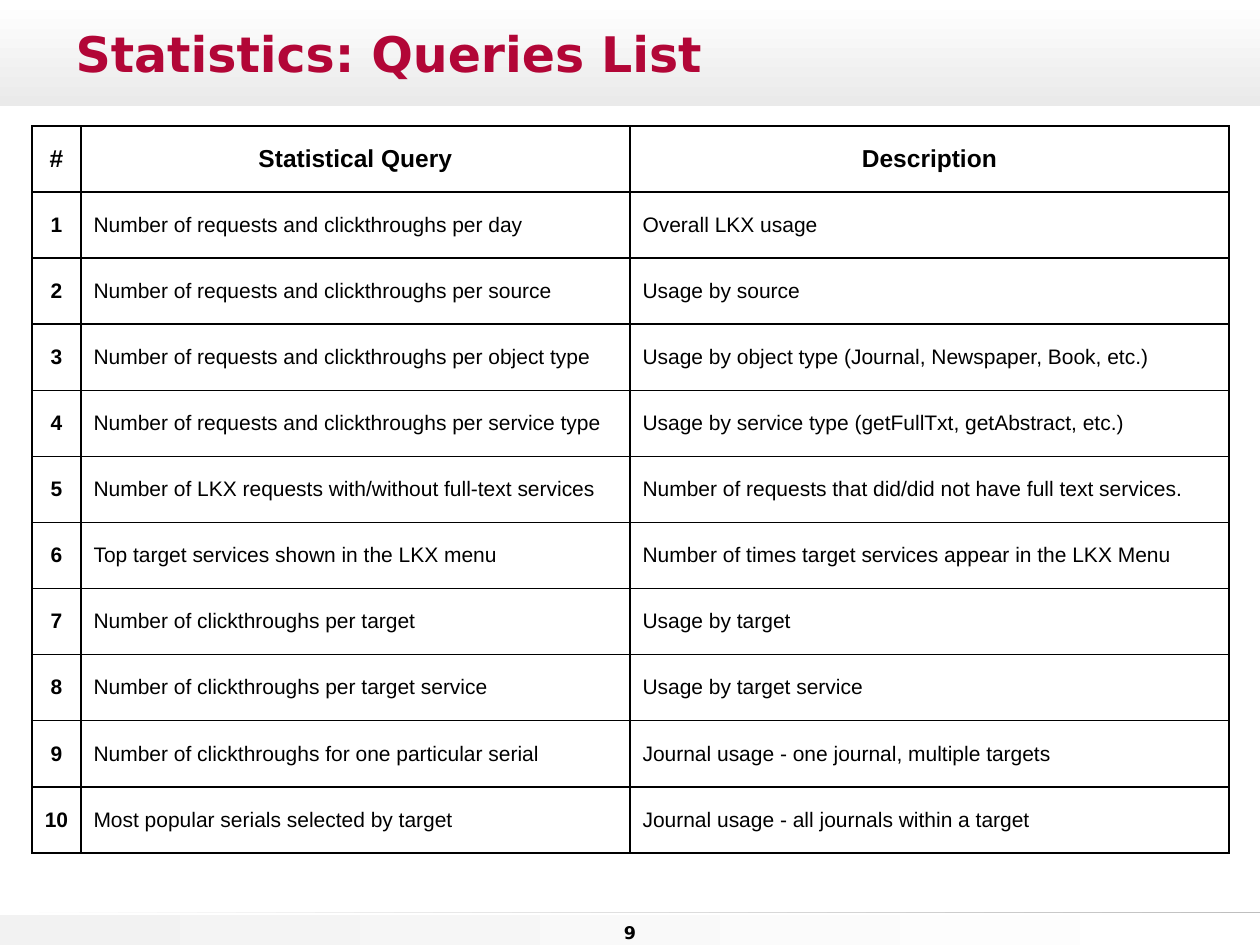
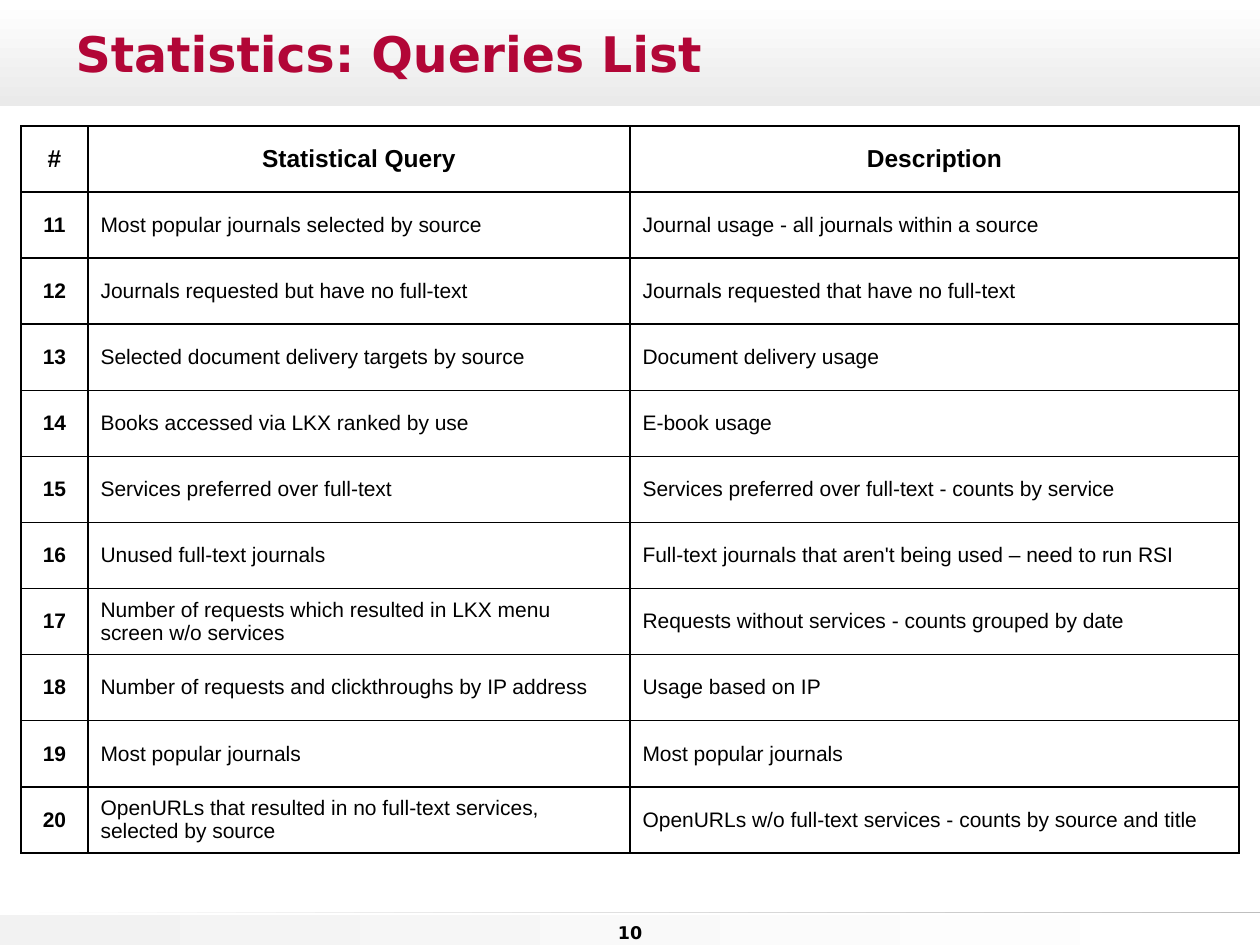
import pptx
import pptx.util
import pptx.dml.color
import pptx.enum.shapes
import pptx.enum.text
import pptx.oxml

# Content
TITLE = "Statistics: Queries List"
HEADINGS = ("#", "Statistical Query", "Description")
FIRST_PAGE = 9

SLIDES = [
    {
        "left": 32,
        "columns": (49, 549, 599),
        "first_number": 1,
        "queries": [
            ("Number of requests and clickthroughs per day", "Overall LKX usage"),
            ("Number of requests and clickthroughs per source", "Usage by source"),
            ("Number of requests and clickthroughs per object type",
             "Usage by object type (Journal, Newspaper, Book, etc.)"),
            ("Number of requests and clickthroughs per service type",
             "Usage by service type (getFullTxt, getAbstract, etc.)"),
            ("Number of LKX requests with/without full-text services",
             "Number of requests that did/did not have full text services."),
            ("Top target services shown in the LKX menu",
             "Number of times target services appear in the LKX Menu"),
            ("Number of clickthroughs per target", "Usage by target"),
            ("Number of clickthroughs per target service", "Usage by target service"),
            ("Number of clickthroughs for one particular serial",
             "Journal usage - one journal, multiple targets"),
            ("Most popular serials selected by target",
             "Journal usage - all journals within a target"),
        ],
    },
    {
        "left": 21,
        "columns": (67, 542, 609),
        "first_number": 11,
        "queries": [
            ("Most popular journals selected by source",
             "Journal usage - all journals within a source"),
            ("Journals requested but have no full-text",
             "Journals requested that have no full-text"),
            ("Selected document delivery targets by source", "Document delivery usage"),
            ("Books accessed via LKX ranked by use", "E-book usage"),
            ("Services preferred over full-text",
             "Services preferred over full-text - counts by service"),
            ("Unused full-text journals",
             "Full-text journals that aren't being used – need to run RSI"),
            ("Number of requests which resulted in LKX menu screen w/o services",
             "Requests without services - counts grouped by date"),
            ("Number of requests and clickthroughs by IP address", "Usage based on IP"),
            ("Most popular journals", "Most popular journals"),
            ("OpenURLs that resulted in no full-text services, selected by source",
             "OpenURLs w/o full-text services - counts by source and title"),
        ],
    },
]

# Shared look: lengths in px, 126 to the inch
WIDTH, HEIGHT = 1260, 945
TITLE_BOX = (63, 16, 1134, 73)
PAGE_BOX = (590, 886, 80, 63)
TABLE_TOP, TABLE_HEIGHT = 126, 727
DISPLAY_FONT, TABLE_FONT = "DejaVu Sans", "Arial"
CRIMSON, BLACK, WHITE = "B20637", "000000", "FFFFFF"

# Box, start colour, end colour, gradient angle (270 runs downwards)
BANDS = [
    ((0, 0, WIDTH, 106), WHITE, "EAEAEA", 270),
    ((0, 915, WIDTH, 30), "F2F2F2", WHITE, 0),
    ((0, 912, WIDTH, 1), WHITE, "BFBFBF", 0),
]

ALIGN = pptx.enum.text.PP_ALIGN
ANCHOR = pptx.enum.text.MSO_ANCHOR


def px(length):
    return pptx.util.Emu(round(length * 914400 / 126))


def color(hex_string):
    return pptx.dml.color.RGBColor.from_string(hex_string)


def place(shape, box):
    shape.left, shape.top, shape.width, shape.height = map(px, box)


def write(text_frame, text, font, size, hex_string, bold, align):
    text_frame.text = text
    paragraph = text_frame.paragraphs[0]
    paragraph.alignment = align
    for run in paragraph.runs:
        run.font.name = font
        run.font.size = pptx.util.Pt(size)
        run.font.bold = bold
        run.font.color.rgb = color(hex_string)


def add_bands(slide, layout):
    """Draw the bands and move them behind the slides, onto the layout."""
    for box, start, end, angle in BANDS:
        band = slide.shapes.add_shape(
            pptx.enum.shapes.MSO_SHAPE.RECTANGLE, *map(px, box))
        band.shadow.inherit = False
        band.line.fill.background()
        band.fill.gradient()
        band.fill.gradient_angle = angle
        for stop, hex_string in zip(band.fill.gradient_stops, (start, end)):
            stop.color.rgb = color(hex_string)
        layout.shapes.element.append(band.element)


def add_title(slide):
    title = slide.shapes.title
    place(title, TITLE_BOX)
    title.text_frame.auto_size = pptx.enum.text.MSO_AUTO_SIZE.NONE
    title.text_frame.vertical_anchor = ANCHOR.MIDDLE
    write(title.text_frame, TITLE, DISPLAY_FONT, 28, CRIMSON, True, ALIGN.LEFT)


def add_page_number(slide, number):
    frame = slide.shapes.add_textbox(*map(px, PAGE_BOX)).text_frame
    frame.word_wrap = True
    frame.vertical_anchor = ANCHOR.BOTTOM
    write(frame, str(number), DISPLAY_FONT, 10, BLACK, True, ALIGN.CENTER)


def add_borders(cell):
    properties = cell._tc.get_or_add_tcPr()
    for position, side in enumerate("LRTB"):
        properties.insert(position, pptx.oxml.parse_xml(
            f'<a:ln{side} xmlns:a="http://schemas.openxmlformats.org/drawingml/2006/main"'
            f' w="12700"><a:solidFill><a:srgbClr val="{BLACK}"/></a:solidFill></a:ln{side}>'))


def add_query_table(slide, left, columns, first_number, queries):
    rows = [HEADINGS]
    rows += [(str(number), *query) for number, query in enumerate(queries, first_number)]
    table = slide.shapes.add_table(
        len(rows), len(columns), px(left), px(TABLE_TOP),
        px(sum(columns)), px(TABLE_HEIGHT)).table
    table.first_row = table.horz_banding = False
    for column, width in zip(table.columns, columns):
        column.width = px(width)
    for row_index, texts in enumerate(rows):
        table.rows[row_index].height = px(TABLE_HEIGHT / len(rows))
        for column_index, text in enumerate(texts):
            cell = table.cell(row_index, column_index)
            is_heading = row_index == 0
            is_label = is_heading or column_index == 0
            cell.fill.background()
            cell.vertical_anchor = ANCHOR.MIDDLE
            write(cell.text_frame, text, TABLE_FONT, 14 if is_heading else 12, BLACK,
                  is_label, ALIGN.CENTER if is_label else ALIGN.LEFT)
            add_borders(cell)


def main():
    presentation = pptx.Presentation()
    presentation.slide_width, presentation.slide_height = px(WIDTH), px(HEIGHT)
    layout = presentation.slide_layouts[5]
    for index, content in enumerate(SLIDES):
        slide = presentation.slides.add_slide(layout)
        if index == 0:
            add_bands(slide, layout)
        add_title(slide)
        add_query_table(slide, **content)
        add_page_number(slide, FIRST_PAGE + index)
    presentation.save("out.pptx")


if __name__ == "__main__":
    main()
